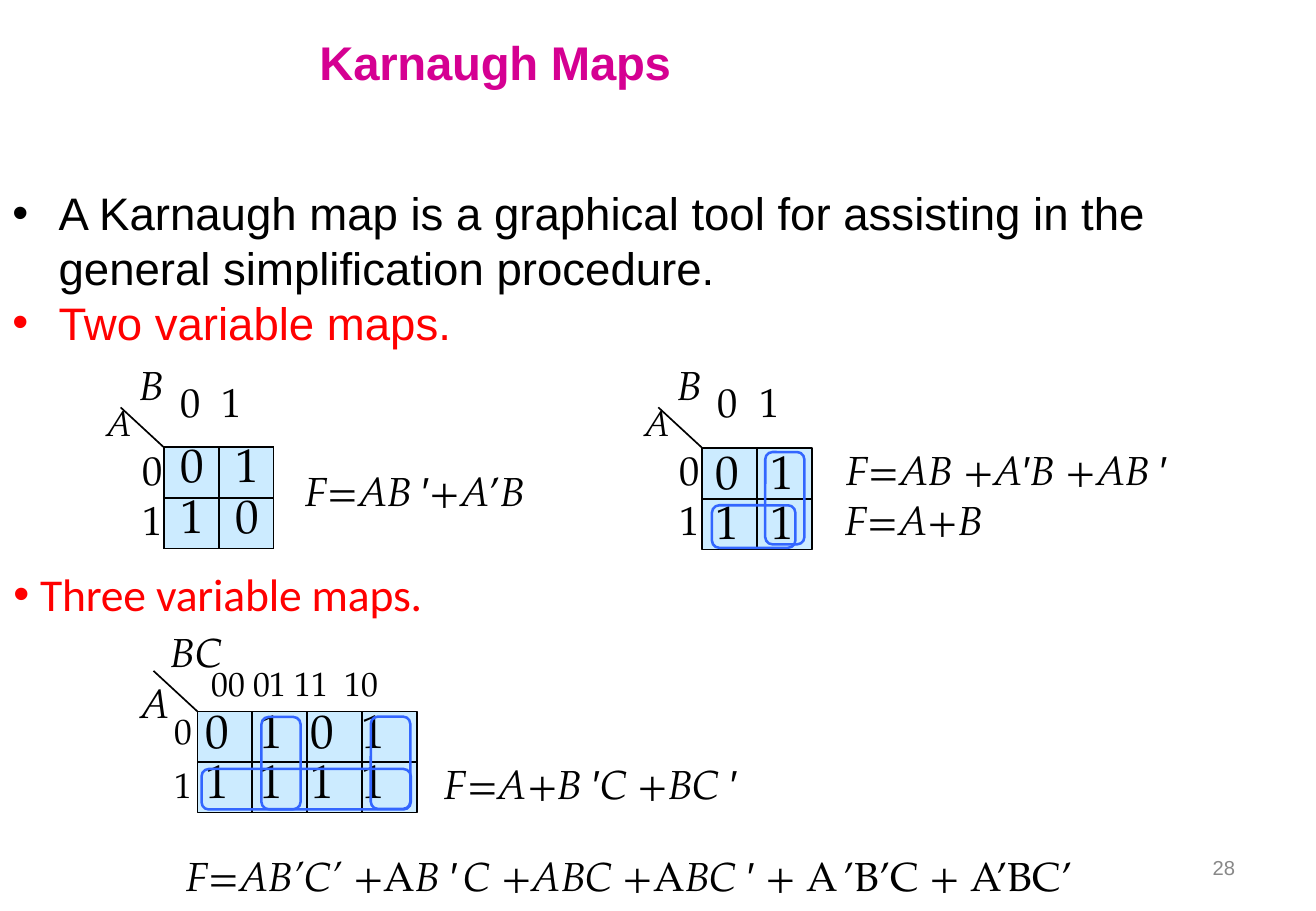
import pptx
import pptx.dml.color
import pptx.enum.shapes
import pptx.enum.text
import pptx.oxml
import pptx.oxml.ns
import pptx.util

Pt = pptx.util.Pt
SERIF = "TeX Gyre Pagella"
BLACK, RED, CELL, LOOP = "000000", "FF0000", "CCEBFF", "3366FF"
CELL_W, CELL_H = 32.5, 30
NS = pptx.oxml.ns.nsdecls("a")


def rgb(value):
    """Turn a hex string into a colour."""
    return pptx.dml.color.RGBColor.from_string(value)


def run(text, size=24, name=SERIF, color=BLACK, spc=0, baseline=0, **font):
    """Describe a run of text."""
    attrs = {"spc": spc, "baseline": baseline}
    return text, dict(size=Pt(size), name=name, **font), color, attrs


def formula(text, spc=0):
    """Split a formula into runs: italic between asterisks, primes in Arial."""
    return [run(part, name="Arial" if part.startswith("′") else SERIF,
                spc=spc, italic=i % 2 == 1)
            for i, part in enumerate(text.split("*")) if part]


def para(*runs, left=0.7, indent=0, bullet=False, **fmt):
    """Describe a paragraph."""
    return runs, left, indent, bullet, fmt


def write(tf, paras):
    """Fill a text frame with paragraphs."""
    for i, (runs, left, indent, bullet, fmt) in enumerate(paras):
        p = tf.add_paragraph() if i else tf.paragraphs[0]
        pPr = p._p.get_or_add_pPr()
        pPr.set("marL", str(Pt(left)))
        pPr.set("indent", str(Pt(indent)))
        if bullet:
            pPr.append(pptx.oxml.parse_xml(f'<a:buFont {NS} typeface="Arial"/>'))
            pPr.append(pptx.oxml.parse_xml(f'<a:buChar {NS} char="•"/>'))
        for key, value in fmt.items():
            setattr(p, key, value)
        for text, font, color, attrs in runs:
            r = p.add_run()
            r.text = text
            for key, value in font.items():
                setattr(r.font, key, value)
            r.font.color.rgb = rgb(color)
            for key, value in attrs.items():
                if value:
                    r._r.get_or_add_rPr().set(key, str(value))


def set_frame(tf, top=0):
    """Give a text frame its insets, wrapping and anchor."""
    values = dict(margin_left=0, margin_right=0, margin_top=Pt(top), margin_bottom=0,
                  word_wrap=True, vertical_anchor=pptx.enum.text.MSO_ANCHOR.TOP)
    for key, value in values.items():
        setattr(tf, key, value)


def textbox(s, x, y, w, h, *paras, top=0.9):
    """Add a text box."""
    tf = s.shapes.add_textbox(Pt(x), Pt(y), Pt(w), Pt(h)).text_frame
    set_frame(tf, top)
    write(tf, paras)


def label(s, x, y, w, h, *runs):
    """Add a one-line text box."""
    textbox(s, x, y, w, h, para(*runs, space_before=Pt(1)))


def box(s, kind, x, y, w, h, line, width, fill=None):
    """Add an outlined shape."""
    sp = s.shapes.add_shape(kind, Pt(x), Pt(y), Pt(w), Pt(h))
    sp.shadow.inherit = False
    if fill:
        sp.fill.solid()
        sp.fill.fore_color.rgb = rgb(fill)
    else:
        sp.fill.background()
    sp.line.color.rgb = rgb(line)
    sp.line.width = Pt(width)
    return sp


def loop(s, x, y, w, h):
    """Add a rounded loop around grouped ones."""
    sp = box(s, pptx.enum.shapes.MSO_SHAPE.ROUNDED_RECTANGLE, x, y, w, h, LOOP, 1.5)
    sp.adjustments[0] = 4.3 / min(w, h)


def grid(s, x, y, rows, indents, spacing):
    """Add a map of rectangles, with a text indent for each column."""
    for i, row in enumerate(rows):
        for j, (value, left) in enumerate(zip(row, indents)):
            sp = box(s, pptx.enum.shapes.MSO_SHAPE.RECTANGLE, x + j * CELL_W,
                     y + i * CELL_H, CELL_W, CELL_H, BLACK, 1, CELL)
            set_frame(sp.text_frame)
            write(sp.text_frame, [para(run(value, 28), left=left, line_spacing=Pt(spacing),
                                       alignment=pptx.enum.text.PP_ALIGN.LEFT)])


def table_map(s, x, y, rows):
    """Add a map as a bordered table."""
    frame = s.shapes.add_table(2, 2, Pt(x), Pt(y), Pt(2 * CELL_W), Pt(2 * CELL_H))
    for i, row in enumerate(rows):
        for j, value in enumerate(row):
            cell = frame.table.cell(i, j)
            set_frame(cell)
            write(cell.text_frame, [para(run(value, 28), line_spacing=Pt(29),
                                         alignment=pptx.enum.text.PP_ALIGN.CENTER)])
            tcPr = cell._tc.get_or_add_tcPr()
            for side in "LRTB":
                width = 1.5 if side == "BT"[i] else 1
                tcPr.append(pptx.oxml.parse_xml(
                    f'<a:ln{side} {NS} w="{Pt(width)}"><a:solidFill>'
                    f'<a:srgbClr val="{BLACK}"/></a:solidFill></a:ln{side}>'))
            cell.fill.solid()
            cell.fill.fore_color.rgb = rgb(CELL)


def diagonal(s, x, y):
    """Add the slanted line at the corner of a map."""
    c = s.shapes.add_connector(pptx.enum.shapes.MSO_CONNECTOR.STRAIGHT,
                               Pt(x), Pt(y), Pt(x - 26), Pt(y - 24))
    c.line.color.rgb = rgb(BLACK)
    c.line.width = Pt(1)
    c._element.spPr.append(pptx.oxml.parse_xml(f"<a:effectLst {NS}/>"))


def axes(s, x, y):
    """Add the variable names and values of a two-variable map."""
    diagonal(s, x, y)
    textbox(s, x - 34.8, y - 44.4, 40, 43,
            para(run("B", italic=True), left=20.2, line_spacing=Pt(20.4), space_before=Pt(1)),
            para(run("A", 36, baseline=-28000, italic=True), line_spacing=Pt(20.4)))
    for i in range(2):
        label(s, x + 8.5 + i * 24.5, y - 42.7, 15, 31, run(str(i)))
        label(s, x - 14, y - 2.7 + i * CELL_H, 15, 31, run(str(i)))


def main():
    """Build the slide."""
    prs = pptx.Presentation()
    prs.slide_width, prs.slide_height = Pt(780), Pt(540)
    s = prs.slides.add_slide(prs.slide_layouts[6])

    label(s, 188.6, 18.7, 359, 35, run("Karnaugh Maps", 28, "Arial", "D50092", -10, bold=True))
    body = dict(left=28.3, indent=-27.4, bullet=True)
    textbox(s, 6.5, 108.4, 730, 99,
            para(run("A Karnaugh map is a graphical tool for assisting in the "
                     "general simplification procedure.", 27, "Arial"),
                 space_before=Pt(1.1), **body),
            para(run("Two variable maps.", 27, "Arial", RED), **body), top=1.4)

    table_map(s, 97.2, 265, ["01", "10"])
    axes(s, 97.5, 265.5)
    label(s, 180.3, 275.3, 136, 31, *formula("*F=AB *′*+A*’*B*", -10))

    grid(s, 416.2, 265.7, ["01", "11"], (8, 8), 29.9)
    axes(s, 416.2, 265.5)
    textbox(s, 500.4, 262.8, 196, 60.5,
            para(*formula("*F=AB *+*A*′*B *+*AB *′", -10), left=1.4, space_before=Pt(1)),
            para(*formula("*F=A*+*B*"), space_before=Pt(0.9)))

    textbox(s, 6.5, 329.8, 266, 72,
            para(run("Three variable maps.", 27, "Calibri", RED, -10), left=17.3,
                 indent=-15.8, bullet=True, space_before=Pt(5.5)),
            para(run("BC", italic=True), left=94.6, space_before=Pt(3.9)), top=5.8)
    grid(s, 117, 421.7, ["0101", "1111"], (5, 4.6, 1.8, 0), 27.5)
    diagonal(s, 117, 421.7)
    label(s, 82.3, 401, 21, 31, run("A", italic=True))
    for i in range(2):
        label(s, 103, 419.5 + i * 31.8, 14, 27, run(str(i), 21))
    label(s, 124.6, 391.7, 75, 26, run("00 01 11", 20, spc=-10))
    label(s, 203.5, 391.7, 30, 26, run("10", 20))
    label(s, 262.8, 449.3, 176.4, 31, *formula("*F=A*+*B *′*C *+*BC *′"))

    for frame in [(119.5, 455.8, 124, 24), (155, 425, 23.2, 54.7), (219.8, 424.8, 23.4, 54.7),
                  (453.6, 268, 23.2, 54.7), (422, 299.5, 49.4, 25.2)]:
        loop(s, *frame)

    label(s, 109.7, 503.3, 166.3, 31, *formula("*F=AB’C’ *+A*B *′"))
    label(s, 274.3, 503.3, 225.4, 31, *formula("*C *+*ABC *+A*BC *′ **+ A"))
    label(s, 499, 503.3, 148.3, 31, *formula("’B’C + A’BC’"))
    label(s, 718.1, 506.2, 17, 16, run("28", 12, "Arial", "888888"))
    prs.save("out.pptx")


if __name__ == "__main__":
    main()
